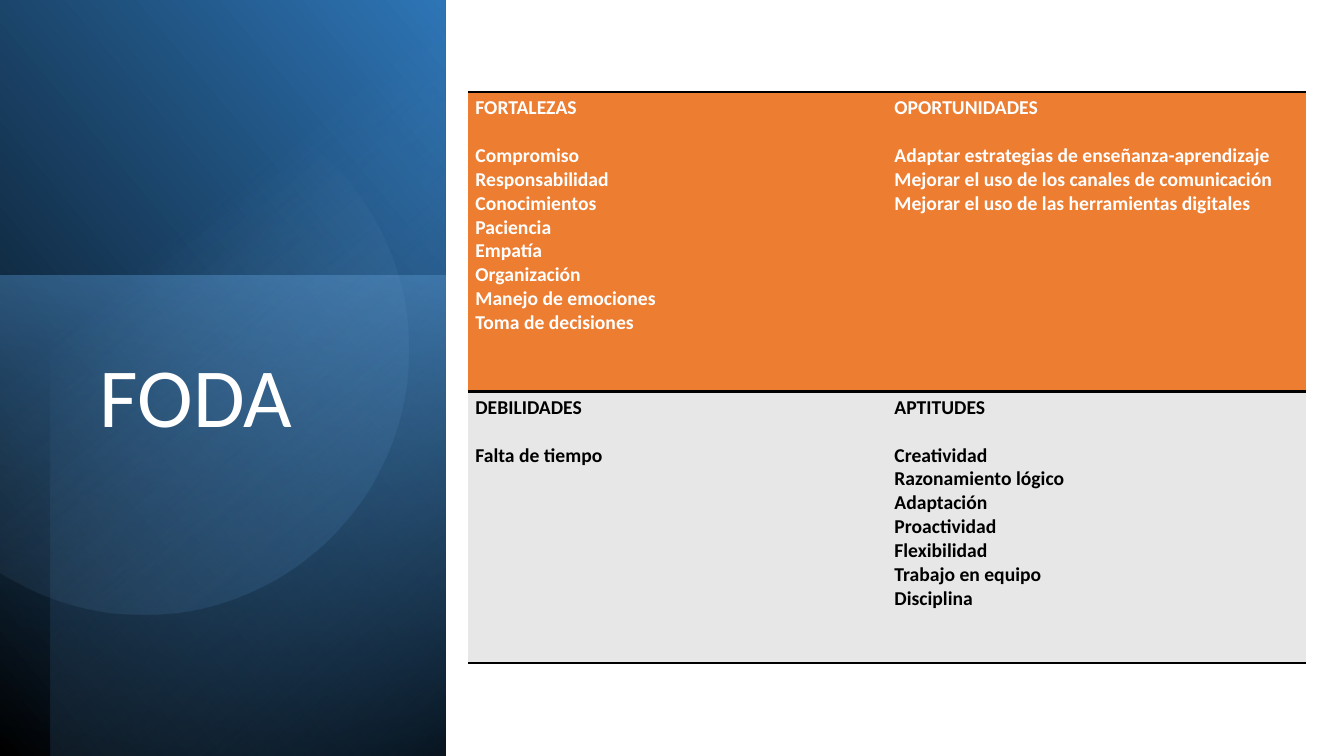
from itertools import pairwise
from math import cos, radians, sin, tan

from lxml.etree import SubElement
from pptx import Presentation
from pptx.dml.color import RGBColor
from pptx.enum.shapes import MSO_SHAPE
from pptx.oxml.ns import qn
from pptx.util import Cm, Pt

BLACK = RGBColor(0x00, 0x00, 0x00)
WHITE = RGBColor(0xFF, 0xFF, 0xFF)
NAVY = RGBColor(0x1F, 0x4E, 0x79)
BLUE = RGBColor(0x2E, 0x75, 0xB6)
SKY = RGBColor(0x5B, 0x9B, 0xD5)
PALE_BLUE = RGBColor(0x9D, 0xC3, 0xE6)
ORANGE = RGBColor(0xED, 0x7D, 0x31)
GREY = RGBColor(0xE7, 0xE7, 0xE7)

QUADRANTS = [
    [
        ["FORTALEZAS", "Compromiso", "Responsabilidad", "Conocimientos", "Paciencia",
         "Empatía", "Organización", "Manejo de emociones", "Toma de decisiones"],
        ["OPORTUNIDADES", "Adaptar estrategias de enseñanza-aprendizaje",
         "Mejorar el uso de los canales de comunicación",
         "Mejorar el uso de las herramientas digitales"],
    ],
    [
        ["DEBILIDADES", "Falta de tiempo"],
        ["APTITUDES", "Creatividad", "Razonamiento lógico", "Adaptación", "Proactividad",
         "Flexibilidad", "Trabajo en equipo", "Disciplina"],
    ],
]
ROW_STYLES = [(7.55, ORANGE, WHITE), (6.83, GREY, BLACK)]  # height, fill, text


class SlideBuilder:
    font_name = "Calibri"

    def __init__(self, slide):
        self.slide = slide

    def style_font(self, paragraph, size, color, bold=False):
        font = paragraph.font
        font.name, font.size, font.bold = self.font_name, Pt(size), bold
        font.color.rgb = color

    def paint_gradient(self, shape, stops, angle):
        """Stops are (position, colour, opacity %); the angle runs clockwise."""
        shape.shadow.inherit = False
        shape.line.fill.background()
        shape.fill.gradient()
        shape.fill.gradient_angle = 360 - angle
        for stop, (position, color, _) in zip(shape.fill.gradient_stops, stops):
            stop.position = position
            stop.color.rgb = color
        gradient = shape._element.spPr.find(qn("a:gradFill"))
        for color_element, (_, _, opacity) in zip(gradient.iter(qn("a:srgbClr")), stops):
            SubElement(color_element, qn("a:alpha")).set("val", str(opacity * 1000))

    def add_panel(self, left, top, width, height, rotation, flipped, stops, angle):
        shape = self.slide.shapes.add_shape(
            MSO_SHAPE.RECTANGLE, Cm(left), Cm(top), Cm(width), Cm(height))
        shape.rotation = rotation
        if flipped:
            shape._element.spPr.find(qn("a:xfrm")).set("flipH", "1")
        self.paint_gradient(shape, stops, angle)

    def add_cut_circle(self, center_x, center_y, radius, degrees, rotation, stops, angle):
        def point(degree, along=0):
            """Point on the circle, moved along its tangent by a share of the radius."""
            turn = radians(degree)
            return (Cm(center_x + radius * (cos(turn) - along * sin(turn))),
                    Cm(center_y + radius * (sin(turn) + along * cos(turn))))

        anchors = [point(degree) for degree in degrees]
        builder = self.slide.shapes.build_freeform(*anchors[0])
        builder.add_line_segments(anchors[1:], close=True)
        shape = builder.convert_to_shape()

        # Bend each straight side into an arc
        sides = list(shape._element.iter(qn("a:lnTo")))
        for side, (start, end) in zip(sides, pairwise(degrees)):
            handle = 4 / 3 * tan(radians(end - start) / 4)
            side.tag = qn("a:cubicBezTo")
            controls = [point(start, handle), point(end, -handle)]
            for index, (x, y) in enumerate(controls):
                control = side.makeelement(qn("a:pt"))
                control.set("x", str(x - shape.left))
                control.set("y", str(y - shape.top))
                side.insert(index, control)
        shape.rotation = rotation
        self.paint_gradient(shape, stops, angle)

    def add_title(self, text, left, top, width, height):
        box = self.slide.shapes.add_textbox(Cm(left), Cm(top), Cm(width), Cm(height))
        box.text_frame.word_wrap = True
        paragraph = box.text_frame.paragraphs[0]
        paragraph.text = text
        paragraph.line_spacing = 0.9
        self.style_font(paragraph, 60, WHITE)

    def set_borders(self, cell):
        properties = cell._tc.get_or_add_tcPr()
        for side in ("lnL", "lnR"):
            SubElement(SubElement(properties, qn(f"a:{side}")), qn("a:noFill"))
        for side in ("lnT", "lnB"):
            line = SubElement(properties, qn(f"a:{side}"))
            line.set("w", str(Pt(2)))
            fill = SubElement(line, qn("a:solidFill"))
            SubElement(fill, qn("a:srgbClr")).set("val", str(BLACK))

    def fill_cell(self, cell, lines, fill_color, text_color):
        self.set_borders(cell)
        cell.fill.solid()
        cell.fill.fore_color.rgb = fill_color
        cell.margin_left = cell.margin_right = Cm(0.19)
        cell.margin_top = cell.margin_bottom = Cm(0.1)
        cell.text_frame.text = "\n".join(lines)
        for paragraph in cell.text_frame.paragraphs:
            self.style_font(paragraph, 14, text_color, bold=True)
        cell.text_frame.paragraphs[0].space_after = Pt(17.1)

    def add_quadrants(self, left, top, column_width):
        height = sum(style[0] for style in ROW_STYLES)
        table = self.slide.shapes.add_table(
            2, 2, Cm(left), Cm(top), Cm(2 * column_width), Cm(height)).table
        table.first_row = table.horz_banding = False
        for row, (row_height, fill_color, text_color) in enumerate(ROW_STYLES):
            table.rows[row].height = Cm(row_height)
            for column, lines in enumerate(QUADRANTS[row]):
                self.fill_cell(table.cell(row, column), lines, fill_color, text_color)


def main():
    presentation = Presentation()
    presentation.slide_width, presentation.slide_height = Cm(33.87), Cm(19.05)
    builder = SlideBuilder(presentation.slides.add_slide(presentation.slide_layouts[6]))

    # Blue side panel: base, lower glow, right shade, circle
    builder.add_panel(-3.94, 3.94, 19.1, 11.23, 90, True,
                      [(0, BLACK, 100), (1, BLUE, 100)], 310)
    builder.add_panel(-0.43, 7.37, 12.09, 11.23, 270, False,
                      [(0, SKY, 50), (1, NAVY, 0)], 190)
    builder.add_panel(-3.28, 4.55, 19.05, 9.96, 270, True,
                      [(0, BLACK, 59), (0.69, SKY, 0)], 220)
    builder.add_cut_circle(4.6, 10.01, 6.68, [135.5, 180, 270, 360, 381.3], 101.6,
                           [(0.39, PALE_BLUE, 0), (1, BLUE, 26)], 310)

    # Title and SWOT table
    builder.add_title("FODA", 2.27, 8.81, 8, 4.19)
    builder.add_quadrants(11.79, 2.32, 10.56)

    presentation.save("out.pptx")


if __name__ == "__main__":
    main()
